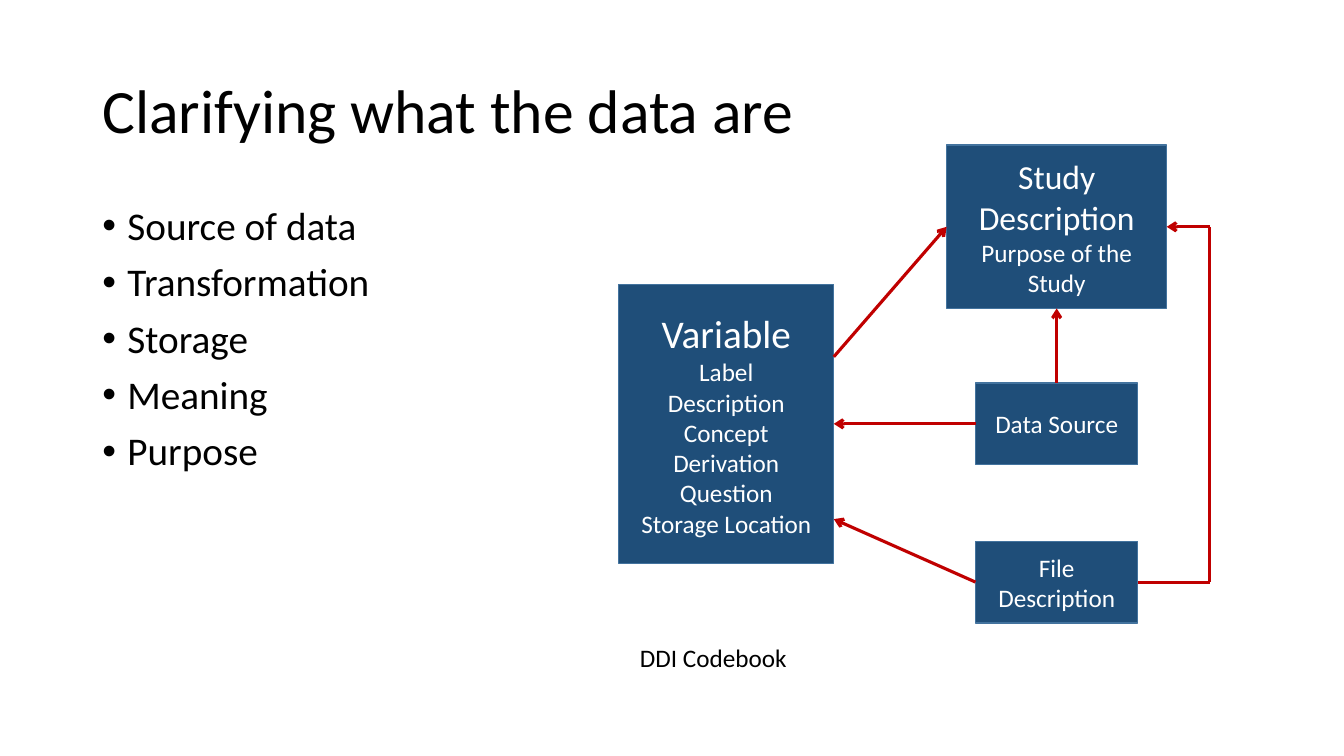
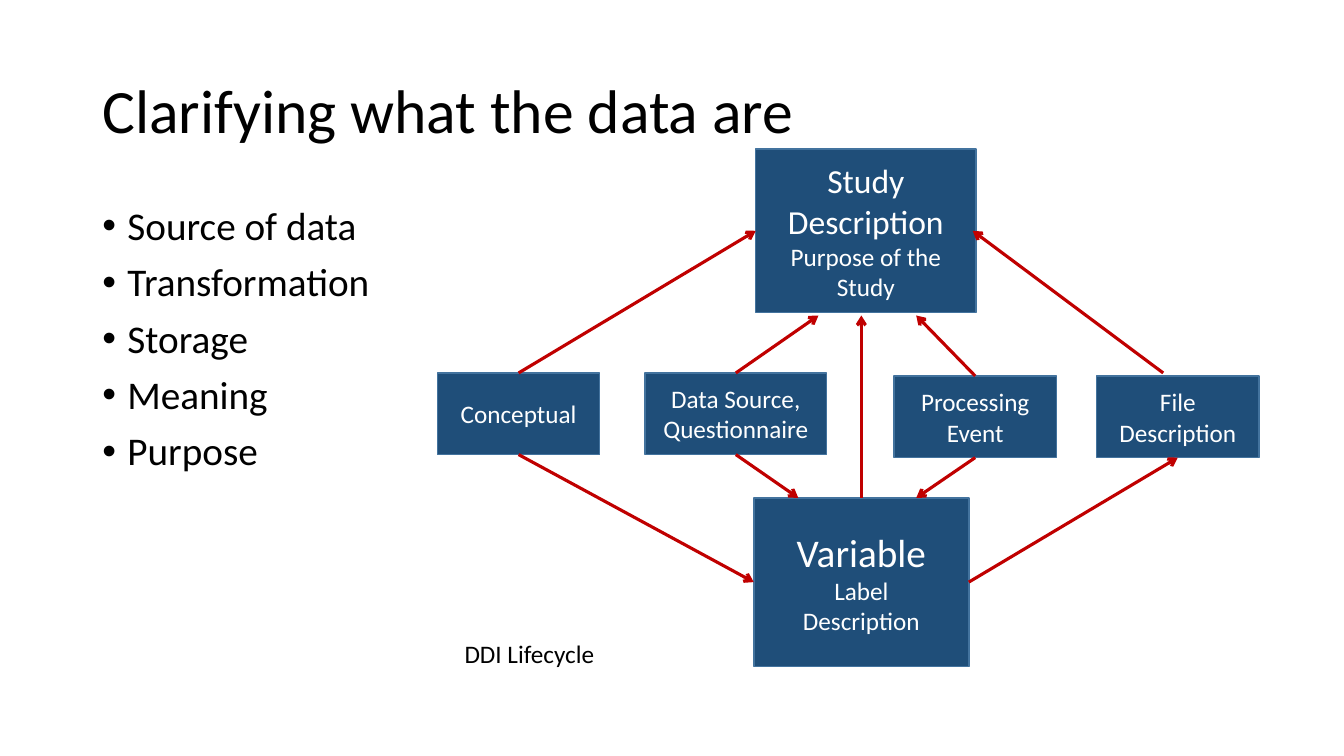
from lxml import etree
from pptx import Presentation
from pptx.dml.color import RGBColor
from pptx.enum.shapes import MSO_CONNECTOR, MSO_SHAPE
from pptx.enum.text import MSO_ANCHOR, MSO_AUTO_SIZE, PP_ALIGN
from pptx.oxml.ns import qn
from pptx.util import Inches, Pt

RECT = MSO_SHAPE.RECTANGLE
LINE = MSO_CONNECTOR.STRAIGHT
TOP, MIDDLE = MSO_ANCHOR.TOP, MSO_ANCHOR.MIDDLE
LEFT, CENTER = PP_ALIGN.LEFT, PP_ALIGN.CENTER
GROW = MSO_AUTO_SIZE.SHAPE_TO_FIT_TEXT

COLS, ROWS = 80, 45
UNIT = Inches(1) // 6
UP, WEST, DOWN, EAST = range(4)

SMALL = (9.66, 4.86)
WIDE = (10.8, 4.86)
LARGE = (13.1, 9.72)
STUDY = [("Study Description", 24), ("Purpose of the Study", 18)]
FILE = [("File Description", 18)]
TITLE = "Clarifying what the data are"
POINTS = ["Source of data", "Transformation", "Storage", "Meaning", "Purpose"]


def paint(hue):
    return RGBColor.from_string(hue)


class Deck:
    """Hold the shared style and the current slide, measured on an 80 by 45 grid."""

    font = "Calibri"
    ink, paper = "000000", "FFFFFF"
    navy, edge, red = "1F4E79", "43739E", "C00000"

    def __init__(self):
        self.show = Presentation()
        self.show.slide_width = COLS * UNIT
        self.show.slide_height = ROWS * UNIT
        self.slide = None

    def grid(self, *cells):
        return [round(cell * UNIT) for cell in cells]

    def start(self):
        self.slide = self.show.slides.add_slide(self.show.slide_layouts[6])
        self.title(TITLE)
        self.bullets(POINTS)

    def fill(self, frame, rows, hue, align=LEFT, anchor=TOP):
        frame.word_wrap = True
        frame.vertical_anchor = anchor
        for num, (text, size) in enumerate(rows):
            para = frame.add_paragraph() if num else frame.paragraphs[0]
            para.alignment = align
            run = para.add_run()
            run.text = text
            run.font.name = self.font
            run.font.size = Pt(size)
            run.font.color.rgb = paint(hue)
        return frame

    def text(self, area, rows, anchor=TOP):
        field = self.slide.shapes.add_textbox(*self.grid(*area))
        return self.fill(field.text_frame, rows, self.ink, anchor=anchor)

    def title(self, words):
        frame = self.text((5.5, 2.4, 69, 8.7), [(words, 44)], MIDDLE)
        frame.paragraphs[0].line_spacing = 0.9

    def bullets(self, items):
        frame = self.text((5.5, 12, 23.9, 28.56), [(item, 28) for item in items])
        for para in frame.paragraphs:
            para.line_spacing = 0.9
            para.space_before = Pt(10)
            props = para._p.get_or_add_pPr()
            props.set("marL", str(Inches(0.25)))
            props.set("indent", str(-Inches(0.25)))
            etree.SubElement(props, qn("a:buFont")).set("typeface", "Arial")
            etree.SubElement(props, qn("a:buChar")).set("char", "•")

    def label(self, area, words):
        frame = self.text(area, [(words, 18)])
        frame.word_wrap = False
        frame.auto_size = GROW

    def box(self, mid, size, rows):
        (x, y), (wide, high) = mid, size
        area = self.grid(x - wide / 2, y - high / 2, wide, high)
        shape = self.slide.shapes.add_shape(RECT, *area)
        shape.shadow.inherit = False
        shape.fill.solid()
        shape.fill.fore_color.rgb = paint(self.navy)
        shape.line.color.rgb = paint(self.edge)
        shape.line.width = Pt(1)
        self.fill(shape.text_frame, rows, self.paper, CENTER, MIDDLE)
        return shape

    def link(self, start, end, arrow=True):
        joins = [hasattr(tip[0], "shape_id") for tip in (start, end)]
        spots = [(0, 0) if join else self.grid(*tip)
                 for join, tip in zip(joins, (start, end))]
        line = self.slide.shapes.add_connector(LINE, *spots[0], *spots[1])
        if joins[0]:
            line.begin_connect(*start)
        if joins[1]:
            line.end_connect(*end)
        line.line.color.rgb = paint(self.red)
        line.line.width = Pt(2.25)
        props = line._element.spPr
        if arrow:
            tail = etree.SubElement(props.find(qn("a:ln")), qn("a:tailEnd"))
            tail.set("type", "arrow")
        etree.SubElement(props, qn("a:effectLst"))


def codebook(deck):
    deck.start()
    axis, rail = 62.9, 72
    top, mid, low = 13.5, 25.23, 34.65
    rows = ["Label", "Description", "Concept", "Derivation", "Question",
            "Storage Location"]
    source = deck.box((axis, mid), SMALL, [("Data Source", 18)])
    value = deck.box((43.23, mid), (12.8, 16.62),
                     [("Variable", 28)] + [(row, 18) for row in rows])
    study = deck.box((axis, top), LARGE, STUDY)
    file = deck.box((axis, low), SMALL, FILE)
    deck.link((49.63, 21.24), (study, WEST))
    deck.link((source, WEST), (value, EAST))
    deck.link((file, WEST), (49.63, 30.9))
    deck.link((source, UP), (study, DOWN))
    deck.link((rail, top), (rail, low), False)
    deck.link((rail, low), (file, EAST), False)
    deck.link((rail, top), (study, EAST))
    deck.label((37.5, 37.92, 10.08, 2.4), "DDI Codebook")


def cycle(deck):
    deck.start()
    left, right = 24.63, 24.81
    under, over = 18.78, 29.64
    value = deck.box((51.27, 34.65), (12.8, 10.02),
                     [("Variable", 28), ("Label", 18), ("Description", 18)])
    source = deck.box((43.8, left), WIDE, [("Data Source, Questionnaire", 18)])
    study = deck.box((51.54, 13.74), LARGE, STUDY)
    file = deck.box((70.11, right), SMALL, FILE)
    event = deck.box((58.05, right), SMALL, [("Processing Event", 18)])
    concept = deck.box((30.87, left), SMALL, [("Conceptual", 18)])
    for start, end in [
        ((source, UP), (48.72, under)),
        ((value, UP), (51.27, under)),
        ((event, UP), (54.54, under)),
        ((69.24, 22.2), (57.9, 13.74)),
        ((concept, UP), (study, WEST)),
        ((concept, DOWN), (value, WEST)),
        ((source, DOWN), (47.52, over)),
        ((event, DOWN), (54.54, over)),
        ((value, EAST), (file, DOWN)),
    ]:
        deck.link(start, end)
    deck.label((27.06, 37.68, 9.06, 2.4), "DDI Lifecycle")


def main():
    deck = Deck()
    codebook(deck)
    cycle(deck)
    deck.show.save("out.pptx")


if __name__ == "__main__":
    main()
